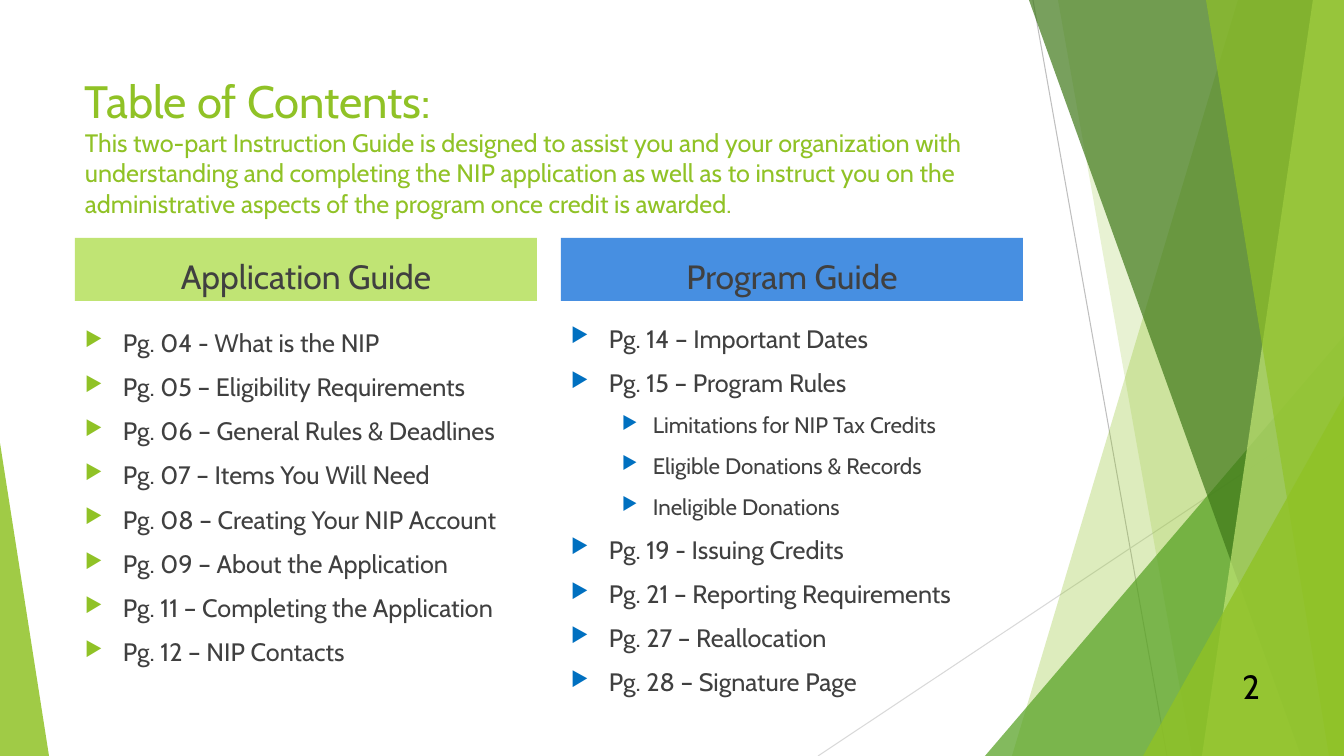
import pptx
import pptx.util
import pptx.dml.color
import pptx.enum.shapes
import pptx.enum.text
import pptx.oxml
import pptx.oxml.ns
from lxml import etree

EMU_PER_PX = 914400 / 100.8
SLIDE_W, SLIDE_H = 1344, 756

THEME = {
    "font": "Cabin",
    "green": "90C226", "mid_green": "54A021", "dark_green": "3F7819", "light_green": "C0E474",
    "blue": "478FE1", "bullet_blue": "0070C0",
    "text": "404040", "black": "000000", "line": "BFBFBF", "pale_line": "D9D9D9",
    "title_size": 32.4, "heading_size": 24, "item_size": 18, "subitem_size": 16,
}

TITLE = "Table of Contents:"
INTRO = ("This two-part Instruction Guide is designed to assist you and your organization with "
         "understanding and completing the NIP application as well as to instruct you on the "
         "administrative aspects of the program once credit is awarded.")
PAGE_NUMBER = "2"

# heading, heading fill, bullet colour, list top, (level, item)
GUIDES = [
    ("Application Guide", "light_green", "green", 322, [
        (0, "Pg. 04 - What is the NIP"),
        (0, "Pg. 05 – Eligibility Requirements"),
        (0, "Pg. 06 – General Rules & Deadlines"),
        (0, "Pg. 07 – Items You Will Need"),
        (0, "Pg. 08 – Creating Your NIP Account"),
        (0, "Pg. 09 – About the Application"),
        (0, "Pg. 11 – Completing the Application"),
        (0, "Pg. 12 – NIP Contacts"),
    ]),
    ("Program Guide", "blue", "bullet_blue", 318, [
        (0, "Pg. 14 – Important Dates"),
        (0, "Pg. 15 – Program Rules"),
        (1, "Limitations for NIP Tax Credits"),
        (1, "Eligible Donations & Records"),
        (1, "Ineligible Donations"),
        (0, "Pg. 19 - Issuing Credits"),
        (0, "Pg. 21 – Reporting Requirements"),
        (0, "Pg. 27 – Reallocation"),
        (0, "Pg. 28 – Signature Page"),
    ]),
]

# Text indent and hanging distance in px, and type size, for each list level
LEVELS = [(38, 38, "item_size"), (82, 31, "subitem_size")]

RAYS = [((1033, 0), (1167, 756), "line"), ((1344, 406), (818, 756), "pale_line")]

# Bands reach the right edge: ("band", (top x, bottom x), ...)
# Wedges are triangles: ("wedge", (left, top, width, height, apex), ...)
FACETS = [
    ("band", (1238, 1012), "green", 30),
    ("band", (1058, 1192), "green", 20),
    ("wedge", (985, 336, 359, 420, 1), "mid_green", 72),
    ("band", (1029, 1301), "dark_green", 70),
    ("band", (1313, 1202), "light_green", 70),
    ("band", (1206, 1329), "green", 65),
    ("wedge", (1143, 396, 201, 360, 1), "green", 80),
    ("wedge", (0, 443, 49, 313, 0), "green", 85),
]

COLUMN_X, COLUMN_STEP, COLUMN_W = 75, 486, 462
HEADING_Y, HEADING_H, LIST_H = 238, 63, 364


def px(*lengths):
    return [pptx.util.Emu(round(length * EMU_PER_PX)) for length in lengths]


def color(name):
    return pptx.dml.color.RGBColor.from_string(THEME[name])


def add_xml(parent, tag, **attributes):
    child = etree.SubElement(parent, pptx.oxml.ns.qn(tag))
    for key, value in attributes.items():
        child.set(key, str(value))
    return child


def paint(shape, fill, opacity=100):
    shape.shadow.inherit = False
    shape.fill.solid()
    shape.fill.fore_color.rgb = color(fill)
    shape.line.fill.background()
    if opacity < 100:
        srgb = shape.fill._xPr.find(".//" + pptx.oxml.ns.qn("a:srgbClr"))
        add_xml(srgb, "a:alpha", val=opacity * 1000)


def style(font, size, ink):
    font.name = THEME["font"]
    font.size = pptx.util.Pt(THEME[size])
    font.color.rgb = color(ink)


def add_text_frame(shapes, *box):
    frame = shapes.add_textbox(*px(*box)).text_frame
    frame.word_wrap = True
    return frame


def add_bullet(paragraph, indent, hanging, ink):
    properties = paragraph._p.get_or_add_pPr()
    left, hang = px(indent, hanging)
    properties.set("marL", str(left))
    properties.set("indent", str(-hang))
    add_xml(add_xml(properties, "a:buClr"), "a:srgbClr", val=THEME[ink])
    add_xml(properties, "a:buSzPct", val=80000)
    add_xml(properties, "a:buChar", char="▶")


def draw_backdrop(shapes):
    for start, end, ink in RAYS:
        ray = shapes.add_connector(pptx.enum.shapes.MSO_CONNECTOR.STRAIGHT, *px(*start, *end))
        ray.line.color.rgb = color(ink)
        ray.line.width = pptx.util.Pt(0.75)
        add_xml(ray._element.spPr, "a:effectLst")
    for kind, place, fill, opacity in FACETS:
        if kind == "band":
            top_x, bottom_x = place
            outline = shapes.build_freeform(top_x, 0, scale=EMU_PER_PX)
            outline.add_line_segments([(SLIDE_W, 0), (SLIDE_W, SLIDE_H), (bottom_x, SLIDE_H)])
            facet = outline.convert_to_shape()
        else:
            *box, apex = place
            facet = shapes.add_shape(pptx.enum.shapes.MSO_SHAPE.ISOSCELES_TRIANGLE, *px(*box))
            facet.adjustments[0] = apex
        paint(facet, fill, opacity)


def draw_title(shapes):
    paragraph = add_text_frame(shapes, COLUMN_X, 68, 948, 145).paragraphs[0]
    title = paragraph.add_run()
    title.text = TITLE
    style(title.font, "title_size", "green")
    paragraph.add_line_break()
    intro = paragraph.add_run()
    intro.text = INTRO
    style(intro.font, "item_size", "green")


def draw_guide(shapes, x, heading, fill, bullet_ink, list_y, items):
    banner = shapes.add_shape(pptx.enum.shapes.MSO_SHAPE.RECTANGLE,
                              *px(x, HEADING_Y, COLUMN_W, HEADING_H))
    paint(banner, fill)
    banner.text_frame.vertical_anchor = pptx.enum.text.MSO_ANCHOR.BOTTOM
    label = banner.text_frame.paragraphs[0]
    label.text = heading
    label.alignment = pptx.enum.text.PP_ALIGN.CENTER
    style(label.font, "heading_size", "text")

    frame = add_text_frame(shapes, x, list_y, COLUMN_W, LIST_H)
    for index, (level, item) in enumerate(items):
        entry = frame.add_paragraph() if index else frame.paragraphs[0]
        indent, hanging, size = LEVELS[level]
        entry.text = item
        entry.level = level
        add_bullet(entry, indent, hanging, bullet_ink)
        if index:
            entry.space_before = pptx.util.Pt(10)
        style(entry.font, size, "text")


def draw_page_number(shapes):
    frame = add_text_frame(shapes, 1194, 666, 76, 40)
    frame.vertical_anchor = pptx.enum.text.MSO_ANCHOR.MIDDLE
    number = frame.paragraphs[0]
    number.text = PAGE_NUMBER
    number.alignment = pptx.enum.text.PP_ALIGN.RIGHT
    style(number.font, "heading_size", "black")


def main():
    deck = pptx.Presentation()
    deck.slide_width, deck.slide_height = px(SLIDE_W, SLIDE_H)
    shapes = deck.slides.add_slide(deck.slide_layouts[6]).shapes
    draw_backdrop(shapes)
    draw_title(shapes)
    for column, guide in enumerate(GUIDES):
        draw_guide(shapes, COLUMN_X + column * COLUMN_STEP, *guide)
    draw_page_number(shapes)
    deck.save("out.pptx")


if __name__ == "__main__":
    main()
